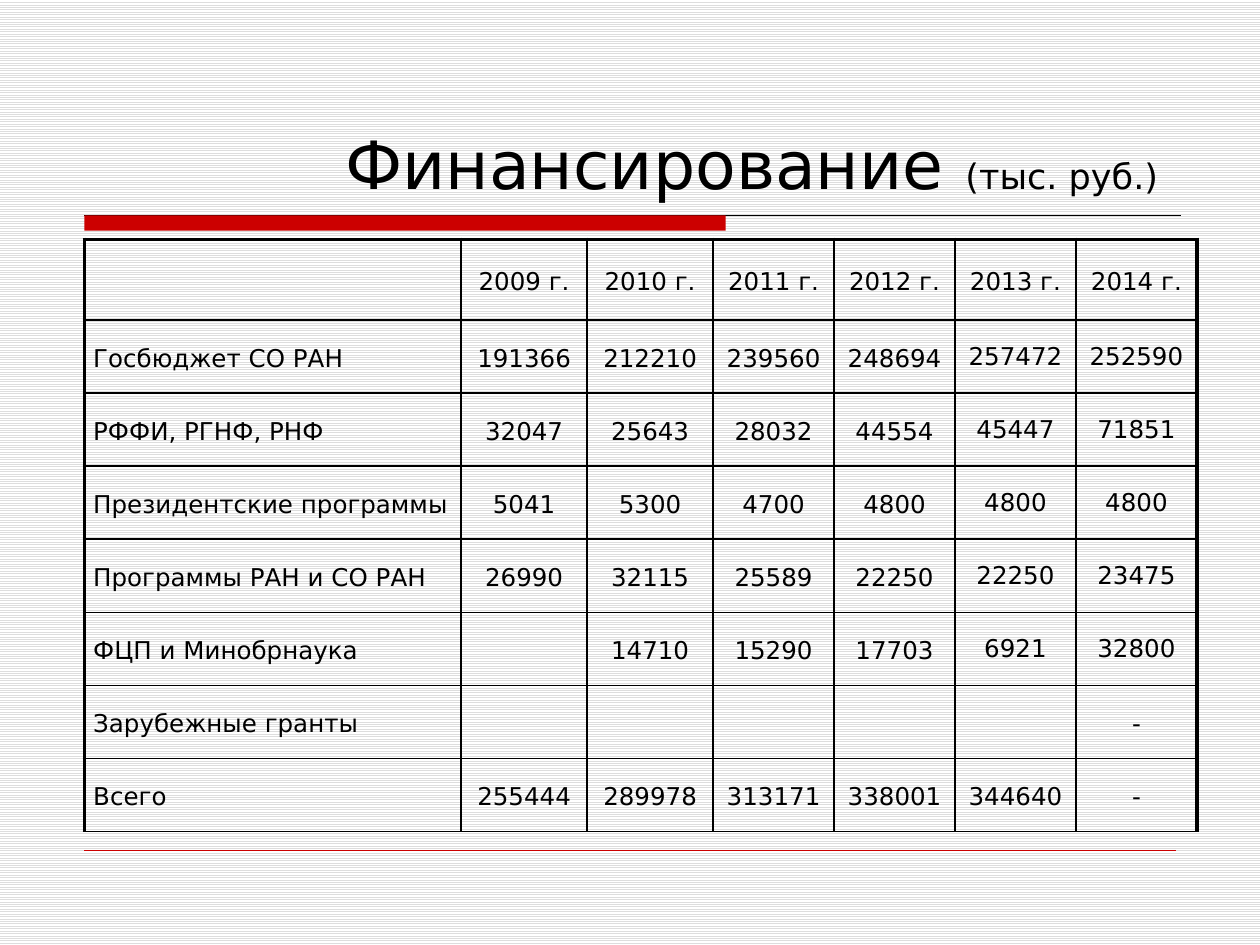
from dataclasses import dataclass

from lxml import etree
from pptx import Presentation, util as u
from pptx.dml.color import RGBColor
from pptx.enum import dml, shapes, text
from pptx.oxml import ns


@dataclass(frozen=True)
class Theme:
    font: str = "DejaVu Sans"
    ink: str = "000000"
    accent: str = "CC0000"
    stripe: str = "DDDDDD"
    paper: str = "FFFFFF"
    title_size: float = 38
    unit_size: float = 20
    cell_size: float = 14
    outer_line: float = 2.25
    inner_line: float = 1


@dataclass(frozen=True)
class FundingRow:
    source: str
    amounts: tuple[str, ...]
    tight_columns: tuple[int, ...] = (5, 6)  # columns set in single spacing


@dataclass(frozen=True)
class Rule:
    left: float
    right: float
    y: float
    color: str
    weight: float


THEME = Theme()
LEFT = 0.67
COLUMNS = [2.99] + [1] * 2 + [0.96] * 4
ROWS = [0.64] + [0.58] * 7

FUNDING = [
    FundingRow("", tuple(f"{year} г." for year in range(2009, 2015)), ()),
    FundingRow("Госбюджет СО РАН", ("191366", "212210", "239560", "248694", "257472", "252590")),
    FundingRow("РФФИ, РГНФ, РНФ", ("32047", "25643", "28032", "44554", "45447", "71851")),
    FundingRow("Президентские программы", ("5041", "5300", "4700", "4800", "4800", "4800")),
    FundingRow("Программы РАН и СО РАН", ("26990", "32115", "25589", "22250", "22250", "23475")),
    FundingRow("ФЦП и Минобрнаука", ("", "14710", "15290", "17703", "6921", "32800")),
    FundingRow("Зарубежные гранты", ("", "", "", "", "", "-"), ()),
    FundingRow("Всего", ("255444", "289978", "313171", "338001", "344640", "-"), ()),
]


def apply(target, **values) -> None:
    for name, value in values.items():
        setattr(target, name, value)


def add_run(paragraph, words: str, size: float) -> None:
    run = paragraph.add_run()
    run.text = words
    apply(run.font, name=THEME.font, size=u.Pt(size))
    run.font.color.rgb = RGBColor.from_string(THEME.ink)


def draw_rule(slide, rule: Rule) -> None:
    line = slide.shapes.add_connector(
        shapes.MSO_CONNECTOR.STRAIGHT,
        *(u.Inches(n) for n in (rule.left, rule.y, rule.right, rule.y)))
    line.line.color.rgb = RGBColor.from_string(rule.color)
    line.line.width = u.Pt(rule.weight)
    etree.SubElement(line._element.spPr, ns.qn("a:effectLst"))


def draw_bar(slide, left: float, top: float, width: float, height: float) -> None:
    bar = slide.shapes.add_shape(
        shapes.MSO_SHAPE.RECTANGLE, *(u.Inches(n) for n in (left, top, width, height)))
    bar.shadow.inherit = False
    bar.fill.solid()
    bar.fill.fore_color.rgb = RGBColor.from_string(THEME.accent)
    bar.line.fill.background()


def draw_title(slide) -> None:
    title = slide.shapes.title
    apply(title, left=u.Inches(2.64), top=u.Inches(0.33),
          width=u.Inches(7.01), height=u.Inches(1.33))
    apply(title.text_frame, vertical_anchor=text.MSO_ANCHOR.BOTTOM,
          auto_size=text.MSO_AUTO_SIZE.NONE, word_wrap=True)
    heading = title.text_frame.paragraphs[0]
    heading.alignment = text.PP_ALIGN.LEFT
    add_run(heading, "Финансирование ", THEME.title_size)
    add_run(heading, "(тыс. руб.)", THEME.unit_size)


def set_borders(cell, widths: dict[str, float]) -> None:
    properties = cell._tc.get_or_add_tcPr()
    for position, (side, width) in enumerate(widths.items()):
        border = etree.Element(ns.qn(f"a:ln{side}"), w=str(u.Pt(width)))
        fill = etree.SubElement(border, ns.qn("a:solidFill"))
        etree.SubElement(fill, ns.qn("a:srgbClr"), val=THEME.ink)
        properties.insert(position, border)


def fill_cell(cell, words: str, centred: bool, spacing: float) -> None:
    apply(cell, vertical_anchor=text.MSO_ANCHOR.MIDDLE, margin_left=u.Inches(0.07),
          margin_right=u.Inches(0.07), margin_top=0, margin_bottom=0)
    cell.fill.background()
    paragraph = cell.text_frame.paragraphs[0]
    apply(paragraph, line_spacing=spacing,
          alignment=text.PP_ALIGN.CENTER if centred else text.PP_ALIGN.LEFT)
    if words:
        add_run(paragraph, words, THEME.cell_size)


def draw_table(slide, left: float, top: float) -> None:
    frame = slide.shapes.add_table(
        len(ROWS), len(COLUMNS), u.Inches(left), u.Inches(top),
        u.Inches(sum(COLUMNS)), u.Inches(sum(ROWS)))
    table = frame.table
    apply(table, first_row=False, horz_banding=False)
    for column, width in zip(table.columns, COLUMNS):
        column.width = u.Inches(width)
    for row, height in zip(table.rows, ROWS):
        row.height = u.Inches(height)

    outer, inner = THEME.outer_line, THEME.inner_line
    last = len(COLUMNS) - 1
    for r, funding in enumerate(FUNDING):
        for c, words in enumerate((funding.source, *funding.amounts)):
            cell = table.cell(r, c)
            fill_cell(cell, words, c > 0, 1.0 if c in funding.tight_columns else 1.15)
            set_borders(cell, {
                "L": outer if c == 0 else inner,
                "R": outer if c == last else inner,
                "T": outer if r == 0 else inner,
                "B": inner,
            })


def main() -> None:
    deck = Presentation()
    apply(deck, slide_width=u.Inches(10), slide_height=u.Inches(7.5))
    slide = deck.slides.add_slide(deck.slide_layouts[5])

    # Striped background
    backdrop = slide.background.fill
    backdrop.patterned()
    backdrop.pattern = dml.MSO_PATTERN.LIGHT_HORIZONTAL
    backdrop.fore_color.rgb = RGBColor.from_string(THEME.stripe)
    backdrop.back_color.rgb = RGBColor.from_string(THEME.paper)

    # Heading with its rule and bar, then the footer rule
    draw_title(slide)
    draw_rule(slide, Rule(LEFT, 9.37, 1.71, THEME.ink, 0.75))
    draw_bar(slide, LEFT, 1.71, 5.09, 0.12)
    draw_rule(slide, Rule(LEFT, 9.33, 6.75, THEME.accent, 0.25))

    # Funding by source and year
    draw_table(slide, LEFT, 1.9)
    deck.save("out.pptx")


if __name__ == "__main__":
    main()
